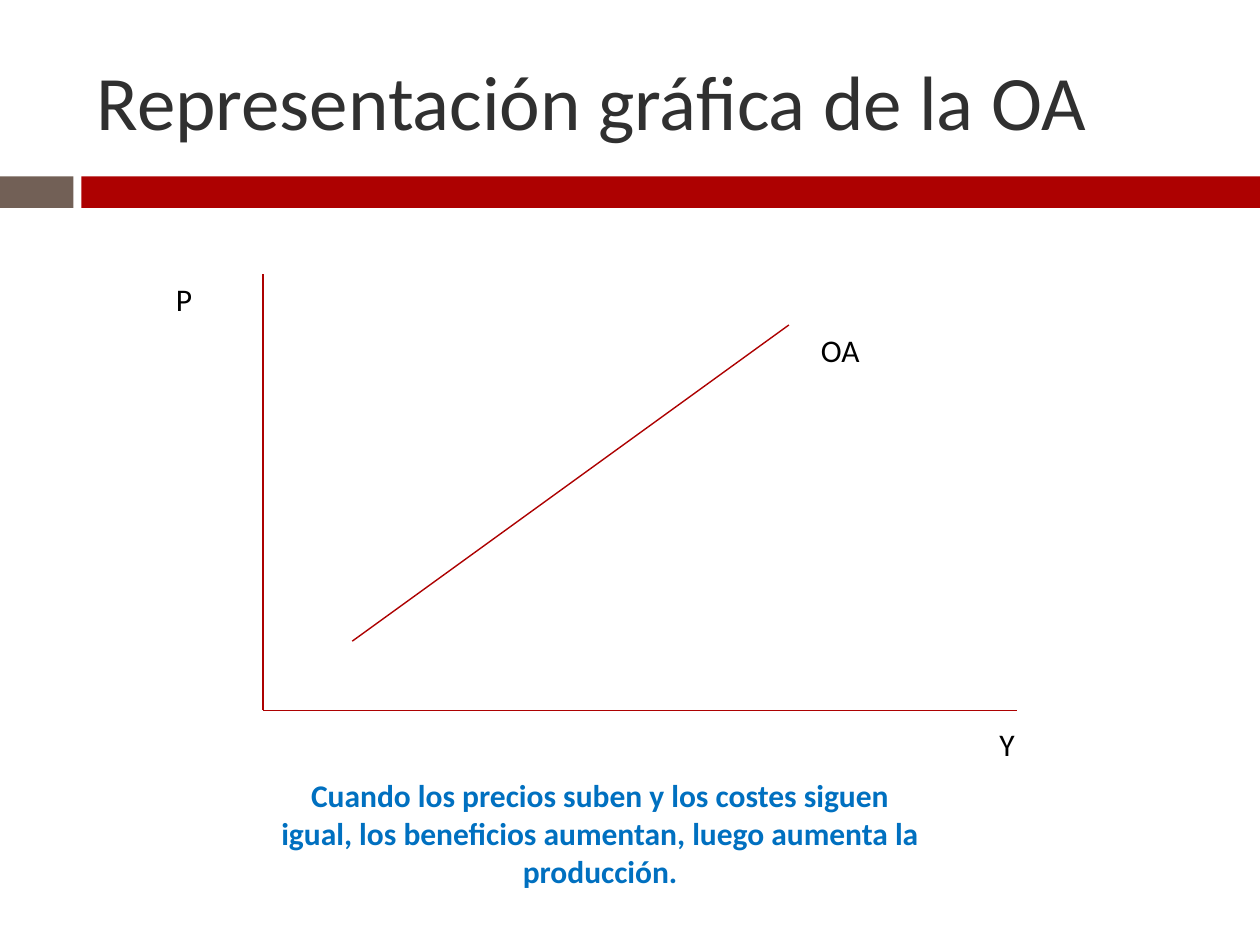
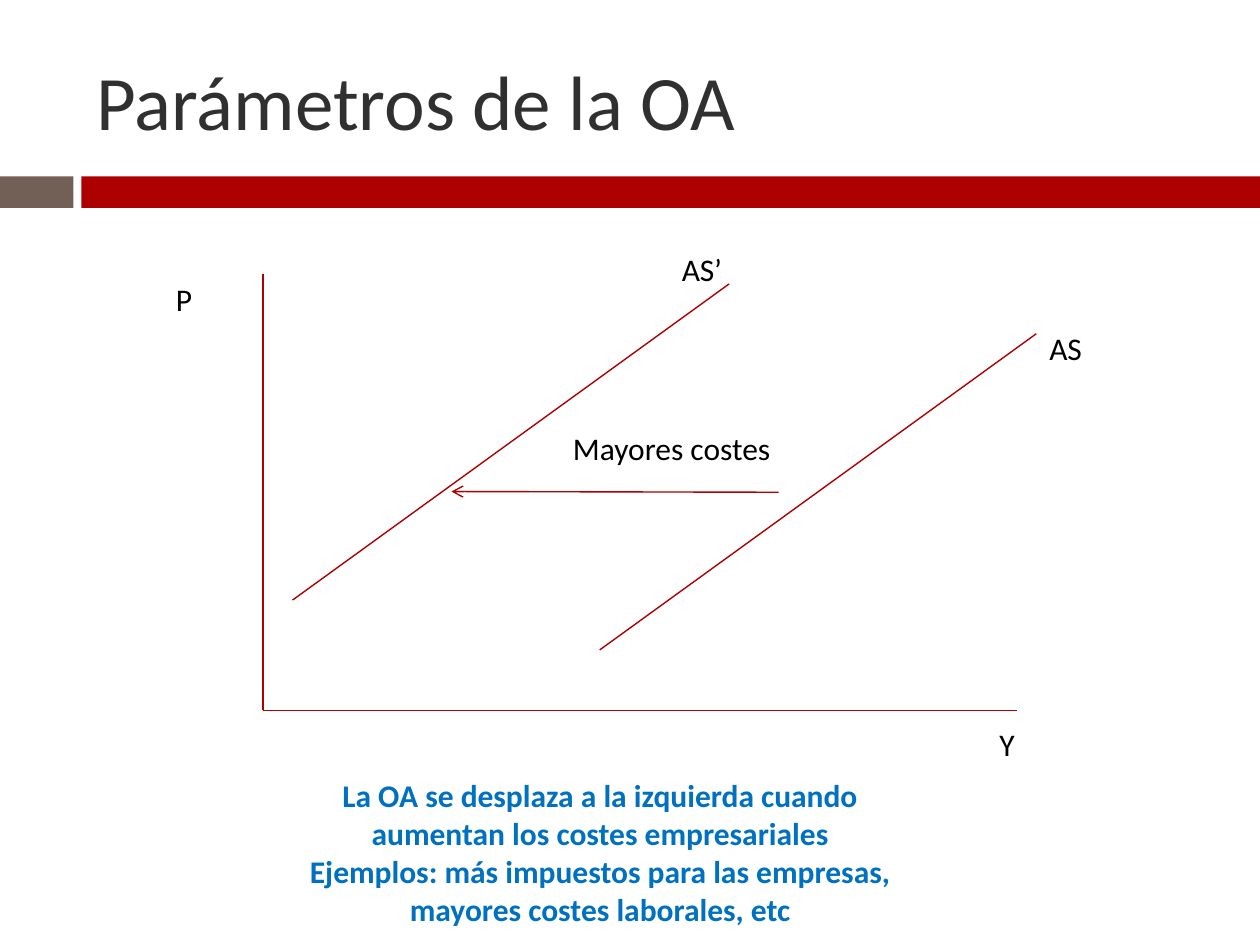
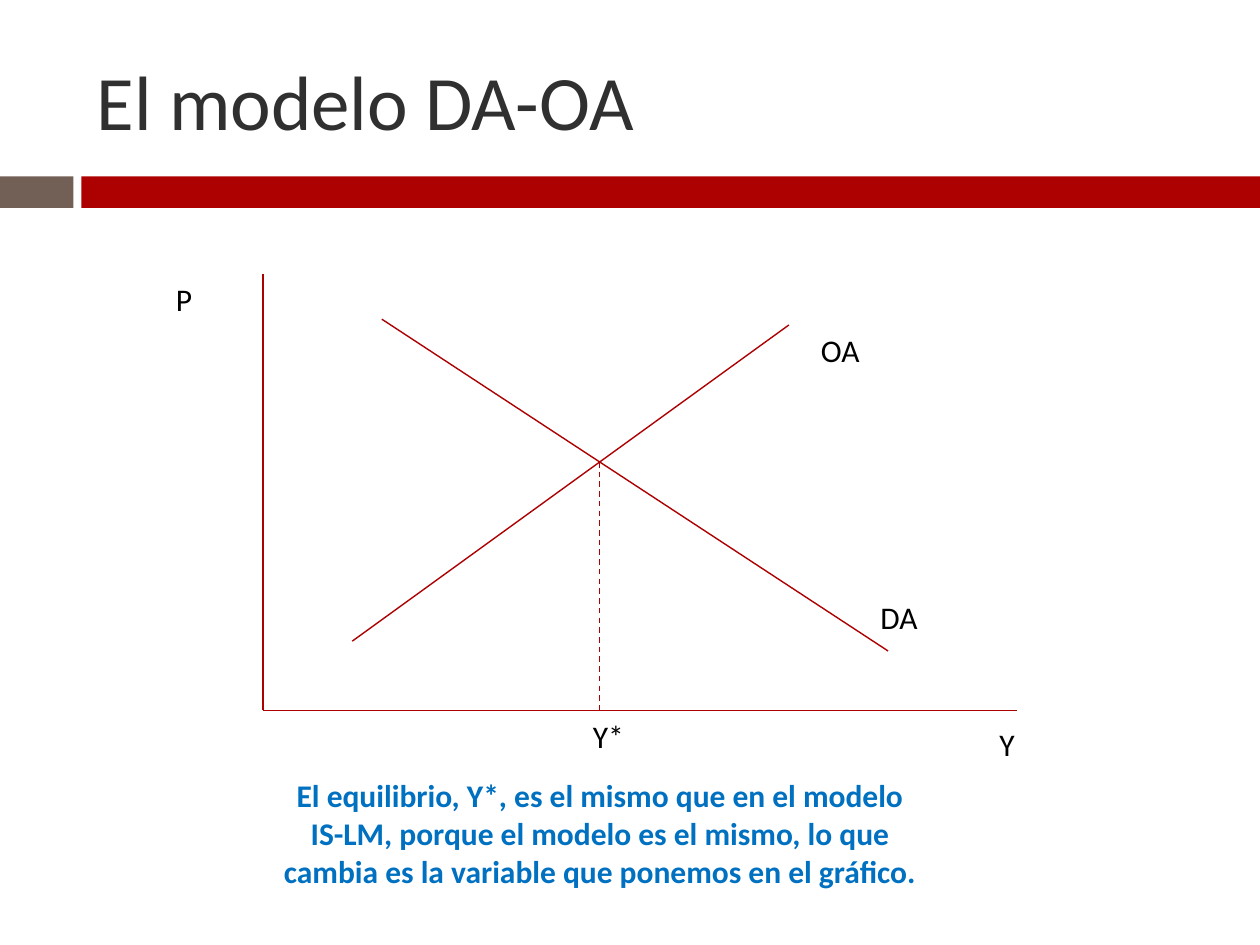
from lxml.etree import SubElement
from pptx import Presentation
from pptx.dml.color import RGBColor
from pptx.enum.dml import MSO_LINE
from pptx.enum.shapes import MSO_CONNECTOR, MSO_SHAPE
from pptx.enum.text import MSO_ANCHOR, PP_ALIGN
from pptx.oxml.ns import qn
from pptx.util import Pt

RED = RGBColor(0xAD, 0x01, 0x01)
TAUPE = RGBColor(0x72, 0x60, 0x56)
DARK = RGBColor(0x30, 0x30, 0x30)
BLUE = RGBColor(0x00, 0x70, 0xC0)
BLACK = RGBColor(0x00, 0x00, 0x00)

FONT = "Calibri"
WIDTH, HEIGHT = 720, 540
LEFT, TOP, RIGHT, BASE = 150.2, 156.7, 581, 406  # edges of the plot
RUN, RISE = 249.5, 180.7  # extent of every supply curve
MID = 342.7  # output at equilibrium


class Deck:
    def __init__(self):
        self.prs = Presentation()
        self.prs.slide_width = Pt(WIDTH)
        self.prs.slide_height = Pt(HEIGHT)
        self.slide = None

    def start(self, title, caption):
        """Add a slide with its title, bands, labelled axes and caption."""
        self.slide = self.prs.slides.add_slide(self.prs.slide_layouts[6])
        self.band(0, 42, TAUPE)
        self.band(46.5, WIDTH - 46.5, RED)
        frame = self.text(title, 48.1, 18, 642, 78, size=44, color=DARK)
        frame.vertical_anchor = MSO_ANCHOR.MIDDLE
        self.line(LEFT, TOP, LEFT, BASE)
        self.line(LEFT, BASE, RIGHT, BASE)
        frame = self.text(caption, 150.5, 440, 385, 73, color=BLUE, bold=True)
        for par in frame.paragraphs:
            par.alignment = PP_ALIGN.CENTER
        self.text("Y", 564, 411, 34)
        self.text("P", 93.5, TOP, 45)

    def band(self, left, width, color):
        shape = self.slide.shapes.add_shape(
            MSO_SHAPE.RECTANGLE, Pt(left), Pt(100.8), Pt(width), Pt(18))
        shape.shadow.inherit = False
        shape.fill.solid()
        shape.fill.fore_color.rgb = color
        shape.line.fill.background()

    def text(self, words, left, top, width, height=29,
             size=18, color=BLACK, bold=False):
        box = self.slide.shapes.add_textbox(
            Pt(left), Pt(top), Pt(width), Pt(height))
        frame = box.text_frame
        frame.word_wrap = True
        frame.text = words
        for par in frame.paragraphs:
            for run in par.runs:
                run.font.name = FONT
                run.font.size = Pt(size)
                run.font.bold = bold
                run.font.color.rgb = color
        return frame

    def line(self, x1, y1, x2, y2, dash=False, arrow=False):
        link = self.slide.shapes.add_connector(
            MSO_CONNECTOR.STRAIGHT, Pt(x1), Pt(y1), Pt(x2), Pt(y2))
        link.line.color.rgb = RED
        link.line.width = Pt(0.79)
        if dash:
            link.line.dash_style = MSO_LINE.DASH
        if arrow:
            SubElement(link.line._get_or_add_ln(), qn("a:tailEnd"), type="arrow")
        SubElement(link._element.spPr, qn("a:effectLst"))

    def supply(self, left, low):
        """Draw a supply curve rising from its lower left end."""
        self.line(left, low, left + RUN, low - RISE)

    def offer(self):
        """Draw the curve named OA."""
        self.supply(201.3, 366.4)
        self.text("OA", 462, 185.6, 73)


def main():
    deck = Deck()

    deck.start(
        "Representación gráfica de la OA",
        "Cuando los precios suben y los costes siguen igual, los beneficios "
        "aumentan, luego aumenta la producción.")
    deck.offer()

    deck.start(
        "Parámetros de la OA",
        "La OA se desplaza a la izquierda cuando aumentan los costes "
        "empresariales\n"
        "Ejemplos: más impuestos para las empresas, mayores costes "
        "laborales, etc")
    deck.supply(167.2, 342.9)
    deck.text("AS’", 382.5, 139.4, 73)
    deck.supply(MID, 371.4)
    deck.line(445, 281.3, 258, 280.9, arrow=True)
    deck.text("AS", 592.5, 184.5, 73)
    deck.text("Mayores costes", 320.3, 241.7, 176)

    deck.start(
        "El modelo DA-OA",
        "El equilibrio, Y*, es el mismo que en el modelo\v"
        "IS-LM, porque el modelo es el mismo, lo que cambia es la variable "
        "que ponemos en el gráfico.")
    deck.offer()
    deck.line(218.2, 182.4, 507.5, 372)
    deck.text("DA", 496, 338, 108)
    deck.line(MID, 264, MID, BASE, dash=True)
    deck.text("Y*", 331.7, BASE, 79)

    deck.prs.save("out.pptx")


if __name__ == "__main__":
    main()
